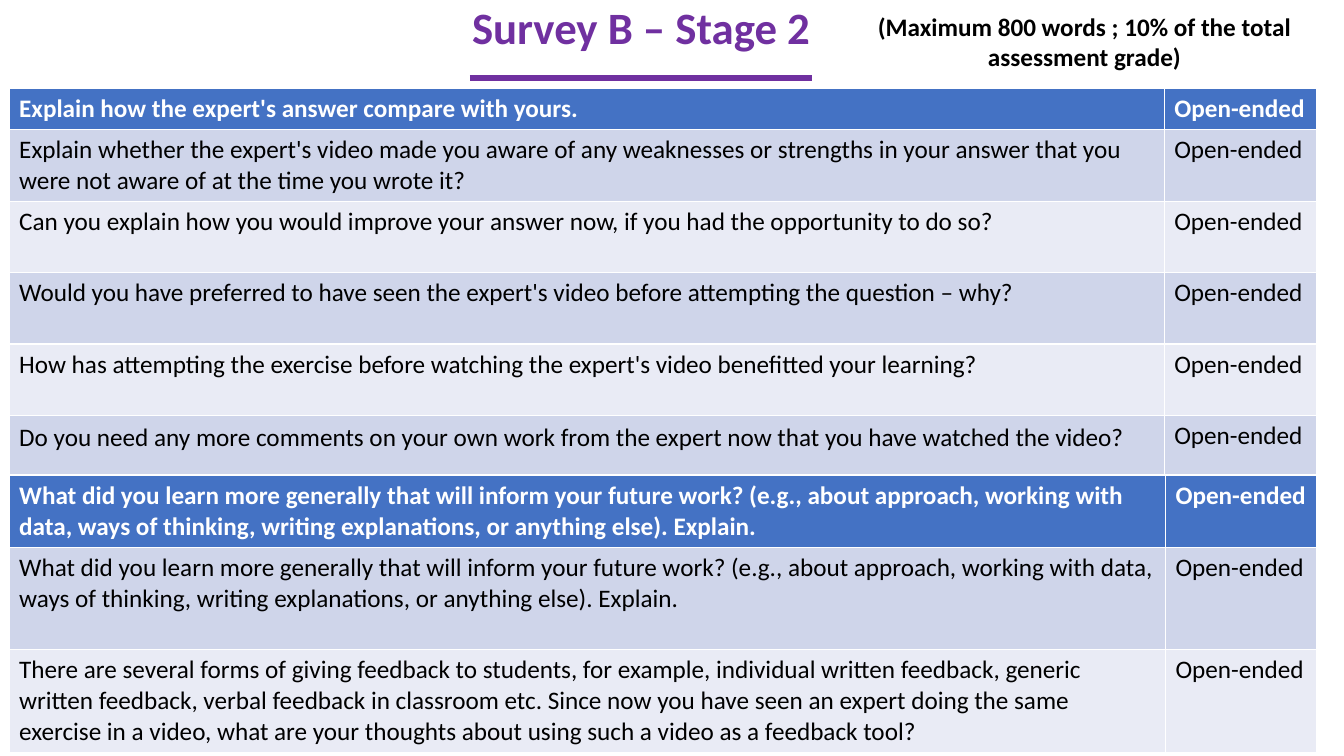
from lxml.etree import SubElement
from pptx import Presentation
from pptx.dml.color import RGBColor
from pptx.enum.text import MSO_ANCHOR, PP_ALIGN
from pptx.oxml.ns import qn
from pptx.util import Cm, Pt

PURPLE, BLUE, WHITE, BLACK = "7030A0", "4472C4", "FFFFFF", "000000"
BANDS = ["E9EBF5", "CFD5EA"]


def paint(color_format, value):
    color_format.rgb = RGBColor.from_string(value)


def write(para, words, size, color, bold):
    span = para.add_run()
    span.text = words
    span.font.name = "Calibri"
    span.font.size = Pt(size)
    span.font.bold = bold
    paint(span.font.color, color)


deck = Presentation()
deck.slide_width, deck.slide_height = Cm(33.87), Cm(19.05)
page = deck.slides.add_slide(deck.slide_layouts[6])

underline = page.shapes.add_connector(1, Cm(11.84), Cm(1.96), Cm(20.47), Cm(1.96))
underline.line.width = Pt(4.5)
paint(underline.line.color, PURPLE)
SubElement(underline._element.spPr, qn("a:effectLst"))

headings = [
    ("Survey B – Stage 2", 32, PURPLE, MSO_ANCHOR.MIDDLE, (10.85, -0.08, 10.62, 1.52)),
    ("(Maximum 800 words ; 10% of the total assessment grade)", 18, BLACK,
     MSO_ANCHOR.TOP, (21.03, 0.15, 12.6, 1.8)),
]
for words, size, color, anchor, place in headings:
    box = page.shapes.add_textbox(*map(Cm, place))
    box.text_frame.word_wrap = True
    box.text_frame.vertical_anchor = anchor
    para = box.text_frame.paragraphs[0]
    para.alignment = PP_ALIGN.CENTER
    write(para, words, size, color, True)

future_work = (
    "What did you learn more generally that will inform your future work? "
    "(e.g., about approach, working with data, ways of thinking, writing "
    "explanations, or anything else). Explain."
)
last_comment = (
    "Do you need any more comments on your own work from the expert now that "
    "you have watched the video?"
)
surveys = [
    (2.24, (29.11, 3.84), [
        (1.03, "Explain how the expert's answer compare with yours."),
        (1.8, "Explain whether the expert's video made you aware of any weaknesses or "
              "strengths in your answer that you were not aware of at the time you wrote it?"),
        (1.8, "Can you explain how you would improve your answer now, if you had the "
              "opportunity to do so?"),
        (1.8, "Would you have preferred to have seen the expert's video before attempting "
              "the question – why?"),
        (1.8, "How has attempting the exercise before watching the expert's video "
              "benefitted your learning?"),
        (1.5, last_comment),
    ]),
    (11.99, (29.14, 3.8), [
        (1.8, future_work),
        (2.58, future_work),
        (2.6, "There are several forms of giving feedback to students, for example, "
              "individual written feedback, generic written feedback, verbal feedback in "
              "classroom etc. Since now you have seen an expert doing the same exercise in "
              "a video, what are your thoughts about using such a video as a feedback tool?"),
    ]),
]
for top, widths, questions in surveys:
    total = sum(height for height, question in questions)
    grid = page.shapes.add_table(
        len(questions), 2, Cm(0.23), Cm(top), Cm(sum(widths)), Cm(total)
    ).table
    for column, width in zip(grid.columns, widths):
        column.width = Cm(width)
    for index, (height, question) in enumerate(questions):
        grid.rows[index].height = Cm(height)
        header = index == 0
        for cell, words in zip(grid.rows[index].cells, (question, "Open-ended")):
            cell.fill.solid()
            paint(cell.fill.fore_color, BLUE if header else BANDS[index % 2])
            para = cell.text_frame.paragraphs[0]
            write(para, words, 18, WHITE if header else BLACK, header)
            if words == last_comment:
                para.line_spacing = 1.07
                para.space_after = Pt(8)

deck.save("out.pptx")
